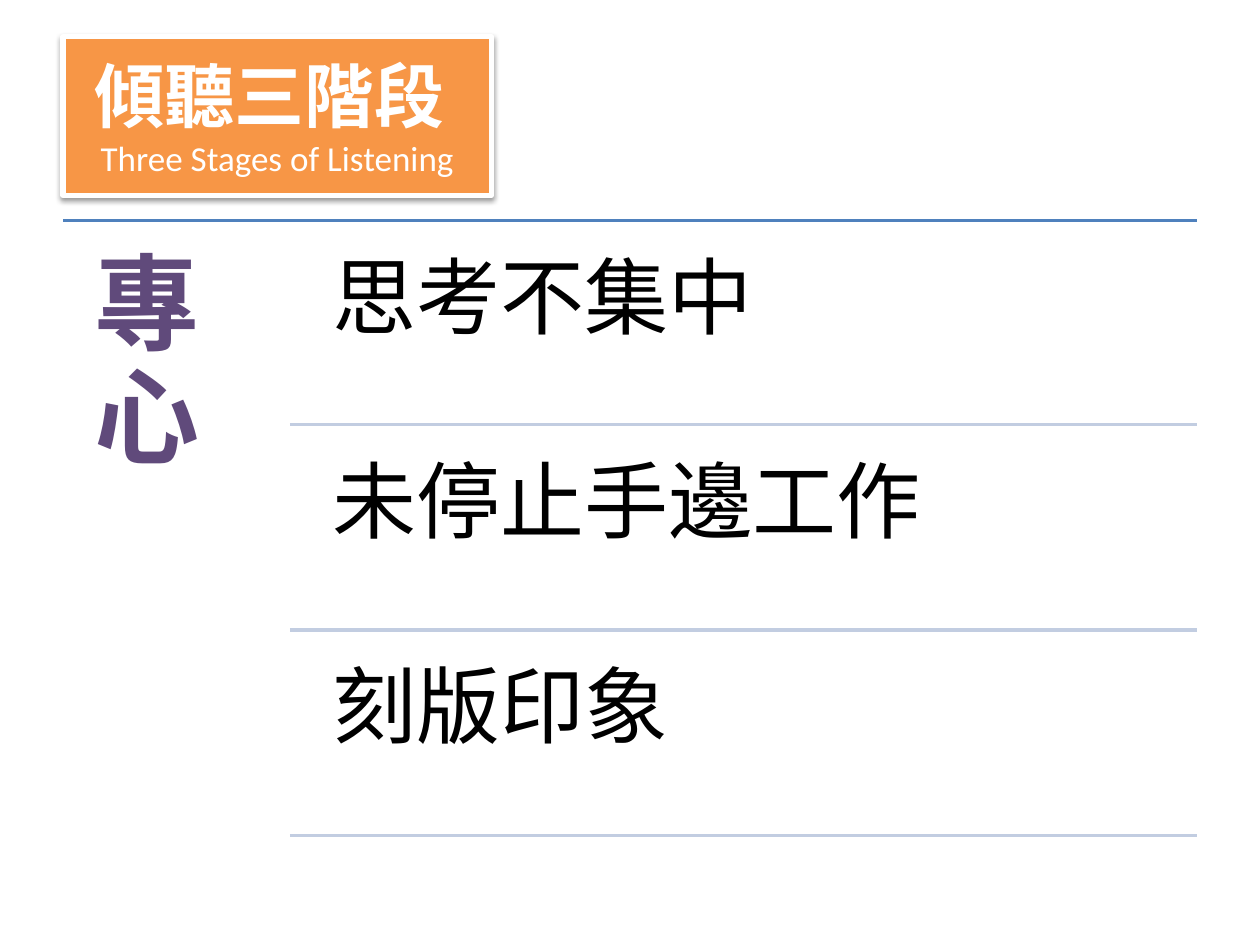
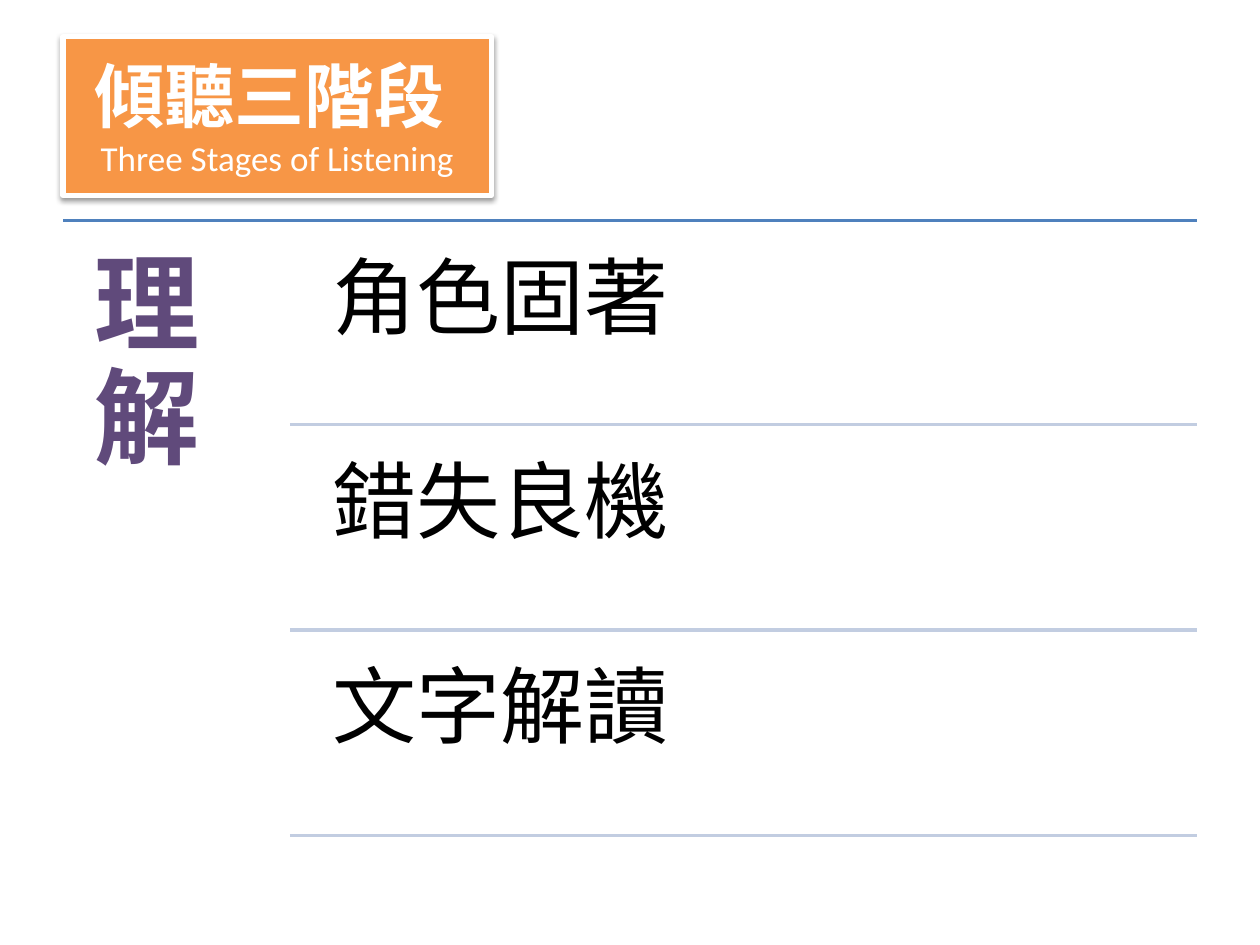
"""Build the two slides on the stages of listening."""
from lxml.etree import SubElement
from pptx import Presentation
from pptx.dml.color import RGBColor
from pptx.enum.shapes import MSO_CONNECTOR as Connector
from pptx.enum.text import MSO_ANCHOR as Anchor, MSO_AUTO_SIZE as AutoSize, PP_ALIGN as Align
from pptx.oxml.ns import qn
from pptx.util import Pt

PX = 9144
TITLE_ONLY = 5
CJK, LATIN = "Noto Sans CJK SC", "Calibri"
WHITE, BLACK, ORANGE = "FFFFFF", "000000", "F79646"
BLUE, PALE_BLUE, PURPLE = "4F81BD", "C2CDE1", "604A7B"

LEFT, TOP, RIGHT = 50, 175, 950
STAGE_WIDTH, STAGE_HEIGHT = 180, 495
THREE_ROWS_HEIGHT, ROW_COUNT = 488, 3
BARRIER_LEFT, BARRIER_GAP = 244, 8
BARRIER_WIDTH, BARRIER_HEIGHT = 707, 155

HEADING = "傾聽三階段 "
SUBHEADING = "Three Stages of Listening"
STAGES = {
    "專心": ["思考不集中", "未停止手邊工作", "刻版印象"],
    "理解": ["角色固著", "錯失良機", "文字解讀"],
}


def px(length):
    return length * PX


def color(value):
    return RGBColor.from_string(value)


class ListeningDeck:
    def __init__(self):
        self.deck = Presentation()
        self.deck.slide_width, self.deck.slide_height = px(1000), px(750)
        self.page = None

    def add_page(self):
        layout = self.deck.slide_layouts[TITLE_ONLY]
        self.page = self.deck.slides.add_slide(layout)

    def style(self, span, size, value, name=CJK, bold=False):
        font = span.font
        font.size, font.bold, font.name = Pt(size), bold, name
        font.color.rgb = color(value)
        SubElement(font._element, qn("a:ea"), typeface=name)

    def title(self):
        box = self.page.shapes.title
        box.left, box.top, box.width, box.height = map(px, (LEFT, 29, 340, 126))
        box.fill.solid()
        box.fill.fore_color.rgb = color(ORANGE)
        box.line.color.rgb = color(WHITE)
        box.line.width = Pt(3)
        self.shadow(box)
        frame = box.text_frame
        frame.auto_size = AutoSize.NONE
        frame.word_wrap = True
        frame.vertical_anchor = Anchor.MIDDLE
        para = frame.paragraphs[0]
        para.text = f"{HEADING}\v{SUBHEADING}"
        para.alignment = Align.CENTER
        heading, subheading = para.runs
        self.style(heading, 40, WHITE, bold=True)
        self.style(subheading, 20, WHITE, LATIN)

    def shadow(self, box):
        effects = SubElement(box._element.spPr, qn("a:effectLst"))
        outer = SubElement(effects, qn("a:outerShdw"), blurRad=str(Pt(3.1)),
                           dist=str(Pt(1.6)), dir="5400000", rotWithShape="0")
        tint = SubElement(outer, qn("a:srgbClr"), val=BLACK)
        SubElement(tint, qn("a:alpha"), val="38000")

    def rule(self, left, top, value):
        line = self.page.shapes.add_connector(
            Connector.STRAIGHT, px(left), px(top), px(RIGHT), px(top))
        line.line.color.rgb = color(value)
        line.line.width = Pt(2)
        SubElement(line._element.spPr, qn("a:effectLst"))

    def text(self, words, place, inset, size, value, bold=False):
        frame = self.page.shapes.add_textbox(*map(px, place)).text_frame
        frame.word_wrap = True
        frame.margin_left = frame.margin_right = px(inset)
        frame.margin_top = frame.margin_bottom = px(inset)
        para = frame.paragraphs[0]
        para.text = words
        para.line_spacing = 0.9
        self.style(para.runs[0], size, value, bold=bold)

    def stage(self, name, barriers):
        self.add_page()
        self.title()
        self.rule(LEFT, TOP, BLUE)
        self.text(name, (LEFT, TOP, STAGE_WIDTH, STAGE_HEIGHT), 25, 60, PURPLE, bold=True)
        edges = [TOP + THREE_ROWS_HEIGHT * row // ROW_COUNT for row in range(ROW_COUNT + 1)]
        for barrier, top, bottom in zip(barriers, edges, edges[1:]):
            place = (BARRIER_LEFT, top + BARRIER_GAP, BARRIER_WIDTH, BARRIER_HEIGHT)
            self.text(barrier, place, 20, 48, BLACK)
            self.rule(LEFT + STAGE_WIDTH, bottom, PALE_BLUE)


def main():
    listening = ListeningDeck()
    for name, barriers in STAGES.items():
        listening.stage(name, barriers)
    listening.deck.save("out.pptx")


if __name__ == "__main__":
    main()
